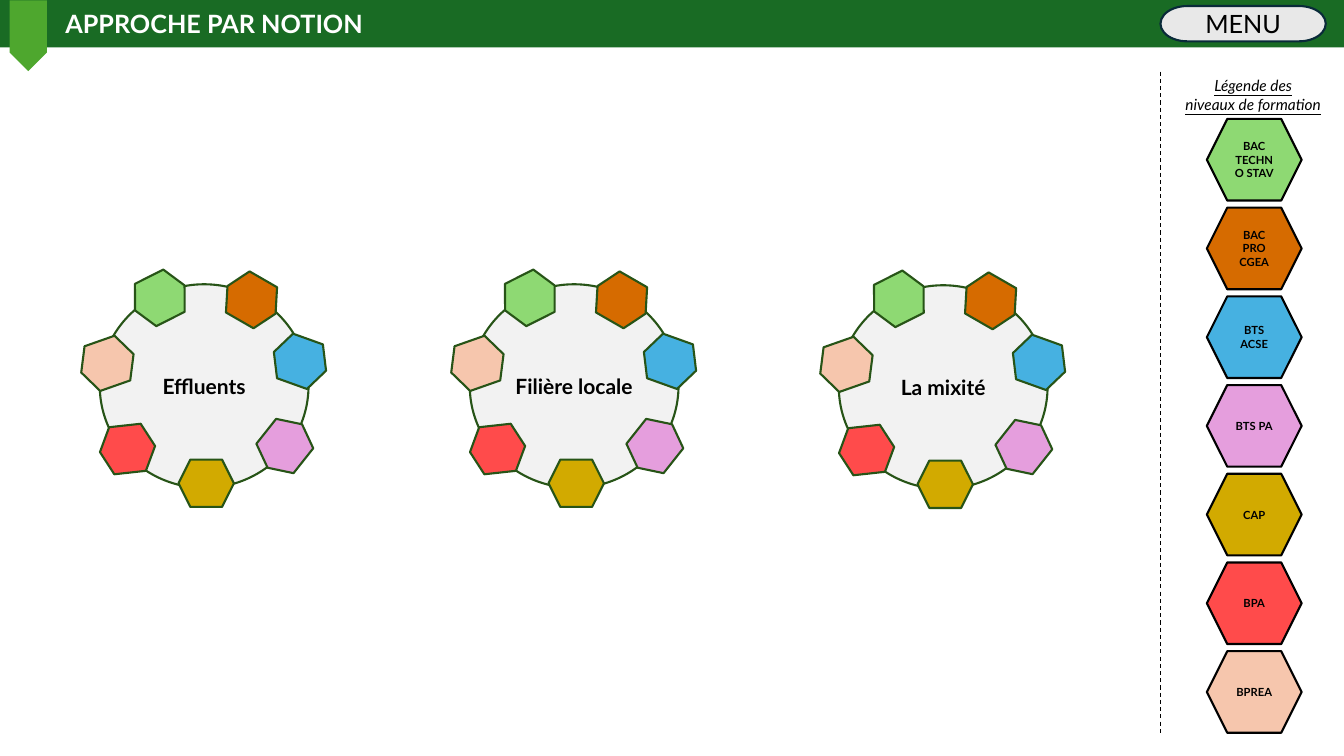
"""Build the slide of three notion wheels with their training-level legend."""
from lxml.etree import SubElement
from pptx import Presentation
from pptx.dml.color import RGBColor
from pptx.enum.dml import MSO_LINE
from pptx.enum.shapes import MSO_CONNECTOR, MSO_SHAPE as SHAPE
from pptx.enum.text import MSO_ANCHOR, PP_ALIGN as ALIGN
from pptx.oxml.ns import qn
from pptx.util import Inches, Pt

GREEN, ORANGE, BLUE, PINK = "8ED973", "D66B00", "46B1E1", "E59EDD"
GOLD, RED, PEACH = "D2AA00", "FF4B4B", "F6C6AD"

LEVELS = [("BAC TECHNO STAV", GREEN), ("BAC PRO CGEA", ORANGE), ("BTS ACSE", BLUE),
          ("BTS PA", PINK), ("CAP", GOLD), ("BPA", RED), ("BPREA", PEACH)]
WHEELS = [("Effluents", 0.99, 2.82), ("Filière locale", 4.66, 2.82), ("La mixité", 8.32, 2.83)]
BADGES = [(0.78, 1.74, 0, GOLD), (1.71, 0.53, 19.7, BLUE), (1.23, -0.08, 29.9, ORANGE),
          (0.32, -0.1, 333.2, GREEN), (-0.2, 0.55, 340.7, PEACH),
          (1.56, 1.37, 308.4, PINK), (0, 1.4, 353.7, RED)]


def rgb(value):
    return RGBColor.from_string(value)


class Deck:
    font = "Lato"
    edge = "275417"

    def __init__(self, prs):
        self.s = prs.slides.add_slide(prs.slide_layouts[6])

    def label(self, sp, text, size, color="000000", align=ALIGN.CENTER,
              bold=False, italic=False, underline=False):
        tf = sp.text_frame
        tf.word_wrap = True
        tf.text = text
        for p in tf.paragraphs:
            p.alignment = align
            for r in p.runs:
                r.font.name, r.font.size = self.font, Pt(size)
                r.font.bold, r.font.italic, r.font.underline = bold, italic, underline
                r.font.color.rgb = rgb(color)

    def shape(self, kind, x, y, w, h, fill, line=None, rotation=0):
        sp = self.s.shapes.add_shape(kind, Inches(x), Inches(y), Inches(w), Inches(h))
        sp.shadow.inherit = False
        sp.rotation = rotation
        sp.fill.solid()
        sp.fill.fore_color.rgb = rgb(fill)
        if line:
            sp.line.color.rgb = rgb(line)
            sp.line.width = Pt(1.5)
        else:
            sp.line.fill.background()
        sp.text_frame.vertical_anchor = MSO_ANCHOR.MIDDLE
        return sp

    def text(self, x, y, w, h, text, size, **styles):
        sp = self.s.shapes.add_textbox(Inches(x), Inches(y), Inches(w), Inches(h))
        self.label(sp, text, size, **styles)

    def dashed_line(self, x1, y1, x2, y2):
        line = self.s.shapes.add_connector(
            MSO_CONNECTOR.STRAIGHT, Inches(x1), Inches(y1), Inches(x2), Inches(y2))
        line.line.color.rgb = rgb("000000")
        line.line.width = Pt(0.75)
        line.line.dash_style = MSO_LINE.DASH
        SubElement(line._element.spPr, qn("a:effectLst"))

    def wheel(self, name, x, y):
        sp = self.shape(SHAPE.FLOWCHART_CONNECTOR, x, y, 2.07, 2.02, "F2F2F2", self.edge)
        self.label(sp, name, 15, bold=True)
        for dx, dy, rotation, fill in BADGES:
            self.shape(SHAPE.HEXAGON, x + dx, y + dy, 0.55, 0.47, fill, self.edge, rotation)

    def level(self, name, fill, y):
        sp = self.shape(SHAPE.HEXAGON, 11.97, y, 0.94, 0.81, fill, "000000")
        self.label(sp, name, 8, bold=True)


def main():
    prs = Presentation()
    prs.slide_width, prs.slide_height = Inches(13.33), Inches(7.5)
    deck = Deck(prs)

    deck.shape(SHAPE.RECTANGLE, 0, 0, 13.33, 0.47, "196B24")
    deck.text(0.55, 0.03, 5.6, 0.4, "APPROCHE PAR NOTION", 18,
              color="FFFFFF", align=ALIGN.LEFT, bold=True)
    menu = deck.shape(SHAPE.FLOWCHART_TERMINATOR, 11.51, 0.06, 1.64, 0.35, "E8E8E8", "092A39")
    deck.label(menu, "MENU", 18)
    deck.shape(SHAPE.PENTAGON, -0.07, 0.17, 0.7, 0.37, "4EA72E", rotation=90)

    for name, x, y in WHEELS:
        deck.wheel(name, x, y)

    deck.text(11.64, 0.71, 1.58, 0.47, "Légende des\nniveaux de formation", 11,
              italic=True, underline=True)
    for i, (name, fill) in enumerate(LEVELS):
        deck.level(name, fill, 1.18 + 0.88 * i)
    deck.dashed_line(11.51, 0.71, 11.51, 7.27)

    prs.save("out.pptx")


if __name__ == "__main__":
    main()
